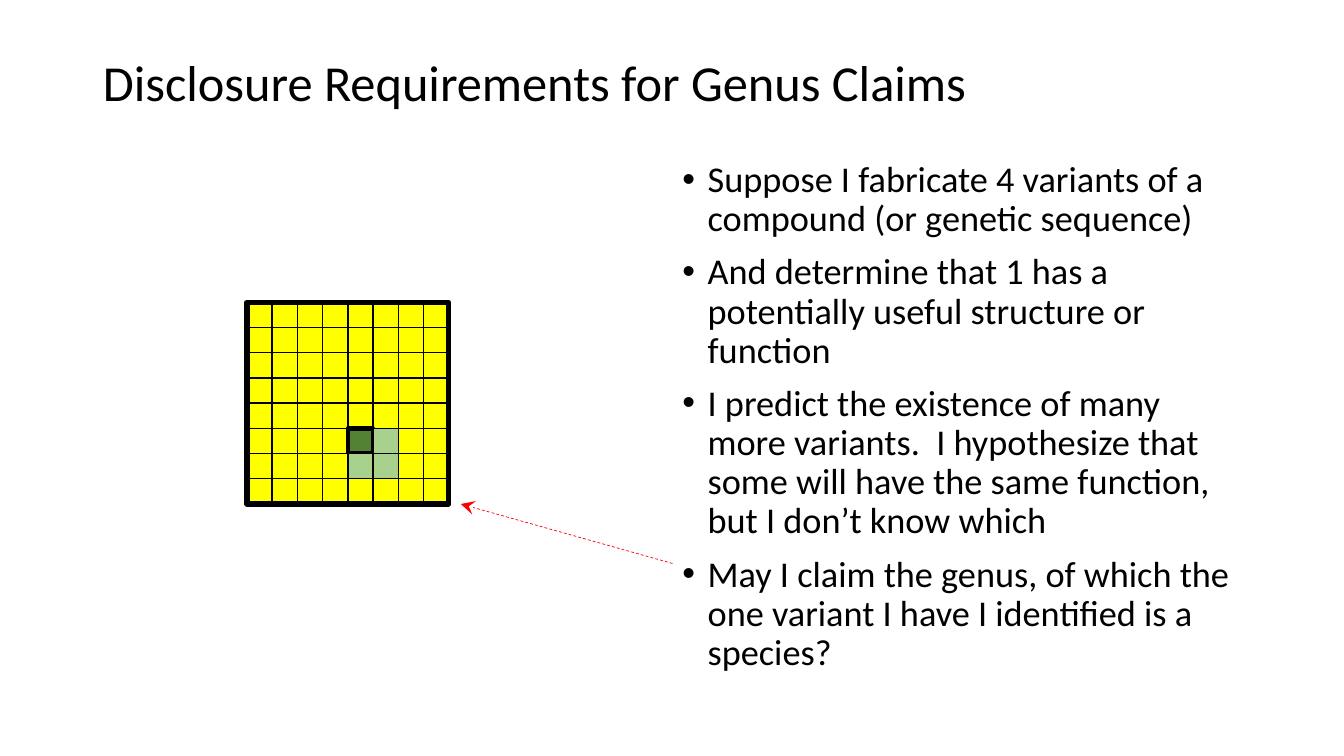
from dataclasses import dataclass
from itertools import product

from lxml.etree import SubElement
from pptx import Presentation
from pptx.dml.color import RGBColor
from pptx.enum.dml import MSO_LINE
from pptx.enum.shapes import MSO_CONNECTOR, MSO_SHAPE
from pptx.enum.text import MSO_ANCHOR, MSO_AUTO_SIZE, PP_ALIGN
from pptx.oxml.ns import qn
from pptx.util import Emu, Pt

PX = 9144  # 100 px to the inch
SIDE, CELL = 8, 25
LEFT, TOP = 245, 300

TITLE = "Disclosure Requirements for Genus Claims"
POINTS = [
    "Suppose I fabricate 4 variants of a compound (or genetic sequence)",
    "And determine that 1 has a potentially useful structure or function",
    "I predict the existence of many more variants.  I hypothesize that "
    "some will have the same function, but I don’t know which",
    "May I claim the genus, of which the one variant I have I identified "
    "is a species?",
]
USEFUL = (5, 4)  # row, column
MADE = {(5, 5), (6, 4), (6, 5)}


@dataclass(frozen=True)
class Theme:
    font: str = "Calibri"
    ink: RGBColor = RGBColor(0, 0, 0)
    genus: RGBColor = RGBColor(0xFF, 0xFF, 0)
    made: RGBColor = RGBColor(0xA9, 0xD1, 0x8E)
    useful: RGBColor = RGBColor(0x54, 0x82, 0x35)
    arrow: RGBColor = RGBColor(0xFF, 0, 0)
    title: float = 36
    body: float = 25.9
    thin: float = 1
    bold: float = 3
    frame: float = 4
    hair: float = 0.5


THEME = Theme()


def px(*sizes):
    return [Emu(size * PX) for size in sizes]


def style(para, size):
    para.alignment = PP_ALIGN.LEFT
    para.line_spacing = 0.9
    para.font.name = THEME.font
    para.font.size = Pt(size)
    para.font.color.rgb = THEME.ink


def add_title(slide, text, *box):
    title = slide.shapes.title
    title.left, title.top, title.width, title.height = px(*box)
    frame = title.text_frame
    frame.text = text
    frame.auto_size = MSO_AUTO_SIZE.NONE
    frame.vertical_anchor = MSO_ANCHOR.MIDDLE
    style(frame.paragraphs[0], THEME.title)


def add_bullet(para):
    props = para._p.get_or_add_pPr()
    props.set("marL", str(25 * PX))
    props.set("indent", str(-25 * PX))
    SubElement(props, qn("a:buFont")).set("typeface", "Arial")
    SubElement(props, qn("a:buChar")).set("char", "•")


def add_list(slide, points, *box):
    frame = slide.shapes.add_textbox(*px(*box)).text_frame
    frame.word_wrap = True
    for i, point in enumerate(points):
        para = frame.add_paragraph() if i else frame.paragraphs[0]
        para.text = point
        add_bullet(para)
        style(para, THEME.body)
        if i:
            para.space_before = Pt(10)


def add_square(slide, left, top, size, weight, fill=None):
    """Draw an outlined square, hollow when no fill is given."""
    square = slide.shapes.add_shape(
        MSO_SHAPE.RECTANGLE, *px(left, top, size, size))
    square.shadow.inherit = False
    if fill is None:
        square.fill.background()
    else:
        square.fill.solid()
        square.fill.fore_color.rgb = fill
    square.line.color.rgb = THEME.ink
    square.line.width = Pt(weight)


def add_grid(slide):
    for row, col in product(range(SIDE), repeat=2):
        fill, weight = THEME.genus, THEME.thin
        if (row, col) == USEFUL:
            fill, weight = THEME.useful, THEME.bold
        elif (row, col) in MADE:
            fill = THEME.made
        add_square(slide, LEFT + col * CELL, TOP + row * CELL,
                   CELL, weight, fill)


def add_arrow(slide, *ends):
    arrow = slide.shapes.add_connector(MSO_CONNECTOR.STRAIGHT, *px(*ends))
    arrow.line.color.rgb = THEME.arrow
    arrow.line.width = Pt(THEME.hair)
    arrow.line.dash_style = MSO_LINE.DASH
    tail = SubElement(arrow.line._get_or_add_ln(), qn("a:tailEnd"))
    tail.set("type", "stealth")
    tail.set("w", "lg")
    tail.set("len", "lg")
    SubElement(arrow._element.spPr, qn("a:effectLst"))


def main():
    deck = Presentation()
    deck.slide_width, deck.slide_height = px(1333, 750)
    slide = deck.slides.add_slide(deck.slide_layouts[5])
    add_grid(slide)
    add_title(slide, TITLE, 92, 40, 1150, 89)
    add_list(slide, POINTS, 667, 155, 575, 533)
    add_square(slide, LEFT, TOP, SIDE * CELL, THEME.frame)
    add_arrow(slide, 667, 559, 457, 500)
    deck.save("out.pptx")


if __name__ == "__main__":
    main()
